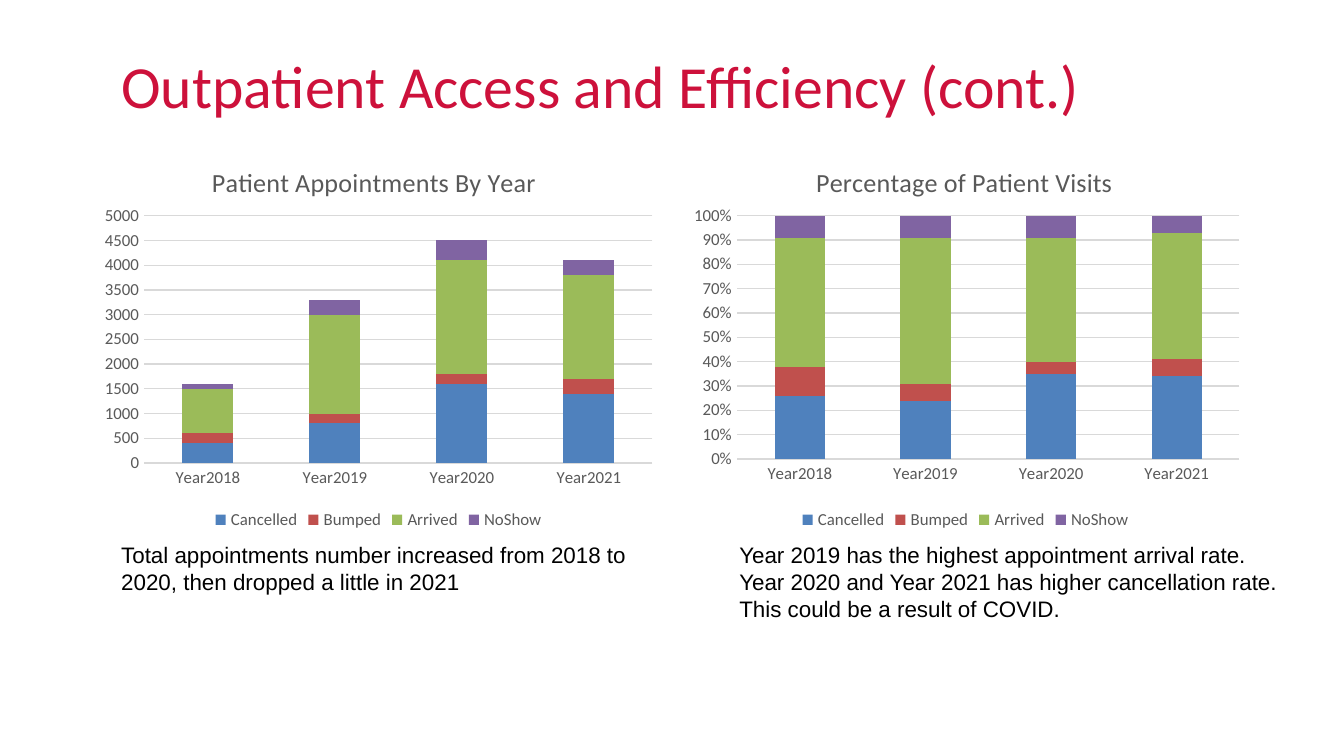
from lxml import etree
from pptx import Presentation
from pptx.chart.data import CategoryChartData
from pptx.dml.color import RGBColor
from pptx.enum.chart import XL_CHART_TYPE, XL_LEGEND_POSITION, XL_TICK_MARK
from pptx.enum.text import MSO_ANCHOR, PP_ALIGN
from pptx.oxml.ns import qn
from pptx.util import Pt

STACKED = XL_CHART_TYPE.COLUMN_STACKED
STACKED_100 = XL_CHART_TYPE.COLUMN_STACKED_100
BOTTOM = XL_LEGEND_POSITION.BOTTOM
NO_TICK = XL_TICK_MARK.NONE
TOP = MSO_ANCHOR.TOP
LEFT = PP_ALIGN.LEFT

PX = 914400 / 134.4
GRAY, GRID = "595959", "D9D9D9"
CHART_TOP, CHART_W, CHART_H = 136, 571, 399
YEARS = ["Year2018", "Year2019", "Year2020", "Year2021"]
COLORS = {"Cancelled": "4F81BD", "Bumped": "C0504D",
          "Arrived": "9BBB59", "NoShow": "8064A2"}


def style(font, size, color, name="Calibri"):
    font.size, font.name, font.bold = Pt(size), name, False
    font.color.rgb = RGBColor.from_string(color)


def set_layout(parent, index, **values):
    """Place a chart part by fractions of the chart area."""
    for old in parent.findall(qn("c:layout")):
        parent.remove(old)
    layout = etree.Element(qn("c:layout"))
    manual = etree.SubElement(layout, qn("c:manualLayout"))
    for tag, val in values.items():
        etree.SubElement(manual, qn("c:" + tag)).set("val", str(val))
    parent.insert(index, layout)


prs = Presentation()
prs.slide_width, prs.slide_height = round(1344 * PX), round(756 * PX)
s = prs.slides.add_slide(prs.slide_layouts[5])

# Title
title = s.shapes.title
title.left, title.top, title.width, title.height = [
    round(v * PX) for v in (108, 42, 1142, 176)]
tf = title.text_frame
tf.text = "Outpatient Access and Efficiency (cont.)"
tf.vertical_anchor = TOP
p = tf.paragraphs[0]
p.alignment = LEFT
style(p.font, 32, "CD113B")

# Charts: left, kind, title, title x, plot (x, y, w, h), axis max, step, format, values
charts = [
    (93, STACKED, "Patient Appointments By Year", 208, (143, 215, 509, 247),
     5000, 500, "General",
     [(400, 800, 1600, 1400), (200, 200, 200, 300),
      (900, 2000, 2300, 2100), (100, 300, 400, 300)]),
    (680, STACKED_100, "Percentage of Patient Visits", 810, (735, 217, 505, 245),
     1, 0.1, "0%",
     [(26, 24, 35, 34), (12, 7, 5, 7), (53, 60, 51, 52), (9, 9, 9, 7)]),
]
for left, kind, heading, title_x, plot_box, top, step, fmt, rows in charts:
    data = CategoryChartData()
    data.categories = YEARS
    for name, values in zip(COLORS, rows):
        data.add_series(name, values)
    box = [round(v * PX) for v in (left, CHART_TOP, CHART_W, CHART_H)]
    chart = s.shapes.add_chart(kind, *box, data).chart
    style(chart.font, 10, "000000")

    # Chart title
    tf = chart.chart_title.text_frame
    tf.text = heading
    style(tf.paragraphs[0].font, 14, GRAY)
    chart.chart_title.include_in_layout = False
    set_layout(chart.chart_title._element, 1, xMode="edge", yMode="edge",
               x=round((title_x - left) / CHART_W, 2), y=0.06)

    # Plot area and columns
    x, y, w, h = plot_box
    set_layout(chart._chartSpace.chart.plotArea, 0, layoutTarget="inner",
               xMode="edge", yMode="edge",
               x=round((x - left) / CHART_W, 2),
               y=round((y - CHART_TOP) / CHART_H, 2),
               w=round(w / CHART_W, 2), h=round(h / CHART_H, 2))
    plot = chart.plots[0]
    plot.gap_width, plot.overlap, plot.vary_by_categories = 150, 100, False
    for series, color in zip(plot.series, COLORS.values()):
        series.format.fill.solid()
        series.format.fill.fore_color.rgb = RGBColor.from_string(color)

    # Axes
    cat, val = chart.category_axis, chart.value_axis
    for axis in (cat, val):
        axis.major_tick_mark = axis.minor_tick_mark = NO_TICK
        style(axis.tick_labels.font, 9, GRAY)
    val.minimum_scale, val.maximum_scale, val.major_unit = 0, top, step
    val.tick_labels.number_format = fmt
    val.tick_labels.number_format_is_linked = False
    val.format.line.fill.background()
    for line in (cat.format.line, val.major_gridlines.format.line):
        line.width = Pt(0.75)
        line.color.rgb = RGBColor.from_string(GRID)

    # Legend
    chart.has_legend = True
    chart.legend.position = BOTTOM
    chart.legend.include_in_layout = False
    style(chart.legend.font, 9, GRAY)

# Comments under the charts
comments = [
    (108, 556, 67, ["Total appointments number increased from 2018 to 2020, "
                    "then dropped a little in 2021"]),
    (726, 571, 95, ["Year 2019 has the highest appointment arrival rate.",
                    "Year 2020 and Year 2021 has higher cancellation rate.",
                    "This could be a result of COVID."]),
]
for left, width, height, lines in comments:
    box = [round(v * PX) for v in (left, 535, width, height)]
    tf = s.shapes.add_textbox(*box).text_frame
    tf.word_wrap = True
    tf.text = "\n".join(lines)
    for p in tf.paragraphs:
        style(p.font, 12, "000000", "Arial")

prs.save("out.pptx")
